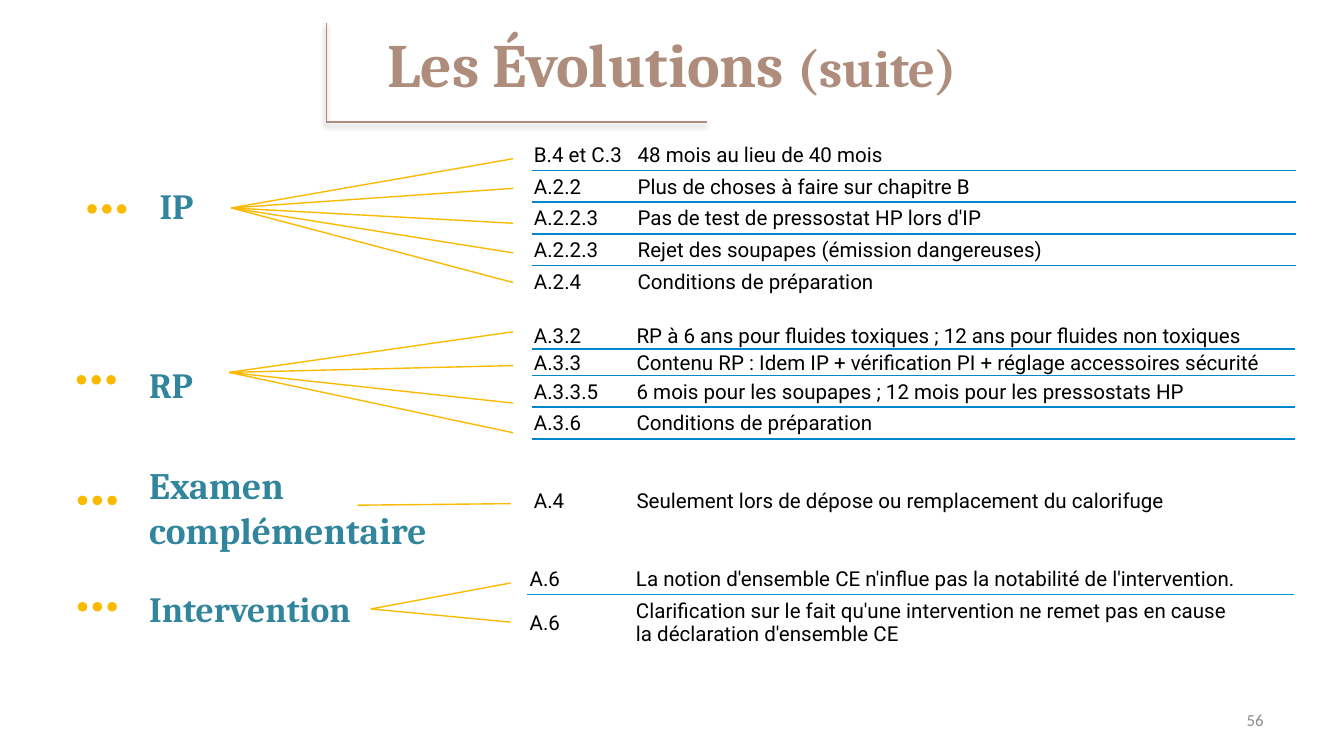
from dataclasses import dataclass

import pptx
import pptx.dml.color
import pptx.enum.shapes
import pptx.enum.text
import pptx.oxml
import pptx.oxml.ns
import pptx.util
from pptx.util import Cm, Pt

ALIGN = pptx.enum.text.PP_ALIGN
ANCHOR = pptx.enum.text.MSO_ANCHOR
SHAPES = pptx.enum.shapes
NS = pptx.oxml.ns.nsdecls("a")


@dataclass(frozen=True)
class Theme:
    title: str = "AE8D7C"
    topic: str = "31859C"
    accent: str = "FBBA00"
    rule: str = "0087CC"
    light_rule: str = "009BD2"
    paper: str = "FFFFFF"
    ink: str = "000000"
    muted: str = "8C8C8C"
    serif: str = "Cambria"
    sans: str = "Roboto"
    number_font: str = "Calibri"
    title_size: float = 33
    suffix_size: float = 28
    topic_size: float = 19
    large_topic_size: float = 20
    cell_size: float = 11
    number_size: float = 9


THEME = Theme()


@dataclass
class Topic:
    """Offsets are in cm, from the top left corner of the topic's box."""
    box: tuple        # left, top, width, height on the slide
    name: str
    label: tuple      # left, top, width, height
    dots: tuple       # left, top
    fan_origin: tuple
    fan_x: float
    fan_ys: tuple
    table: tuple      # left, top
    columns: tuple
    row_heights: tuple
    entries: tuple
    rule: str = THEME.rule
    closing_rule: bool = False
    size: float = THEME.topic_size
    line_spacing: float = 1.1


def rgb(value):
    return pptx.dml.color.RGBColor.from_string(value)


def write(paragraph, text, *, font, size, color, bold=False,
          align=ALIGN.LEFT, line_spacing=None):
    paragraph.alignment = align
    if line_spacing:
        paragraph.line_spacing = line_spacing
    for index, line in enumerate(text.split("\n")):
        if index:
            paragraph.add_line_break()
        run = paragraph.add_run()
        run.text = line
        run.font.name, run.font.size, run.font.bold = font, Pt(size), bold
        run.font.color.rgb = rgb(color)


def add_frame(slide, left, top, width, height, anchor=ANCHOR.TOP):
    frame = slide.shapes.add_textbox(Cm(left), Cm(top), Cm(width), Cm(height)).text_frame
    frame.word_wrap = True
    frame.vertical_anchor = anchor
    return frame


def add_title(slide, box):
    left, top, width, height = box
    heading = add_frame(slide, *box, anchor=ANCHOR.MIDDLE).paragraphs[0]
    style = dict(font=THEME.serif, color=THEME.title, bold=True, align=ALIGN.CENTER)
    write(heading, "Les Évolutions ", size=THEME.title_size, **style)
    write(heading, "(suite)", size=THEME.suffix_size, **style)

    # Corner bracket with a soft shadow
    x, y = left + 6.17, top + 0.43
    outline = slide.shapes.build_freeform(Cm(x), Cm(y))
    outline.add_line_segments([(Cm(x), Cm(y + 1.88)), (Cm(x + 7.19), Cm(y + 1.88))], close=False)
    bracket = outline.convert_to_shape()
    bracket.fill.background()
    bracket.line.color.rgb = rgb(THEME.title)
    bracket.line.width = Pt(0.75)
    bracket.shadow.inherit = False
    effects = bracket._element.spPr.find(pptx.oxml.ns.qn("a:effectLst"))
    effects.append(pptx.oxml.parse_xml(
        f'<a:outerShdw {NS} blurRad="{Pt(3.1)}" dist="{Pt(1.8)}" dir="5400000" rotWithShape="0">'
        f'<a:srgbClr val="{THEME.ink}"><a:alpha val="35000"/></a:srgbClr></a:outerShdw>'))


def add_page_number(slide, box):
    number = add_frame(slide, *box, anchor=ANCHOR.MIDDLE).paragraphs[0]
    write(number, "56", font=THEME.number_font, size=THEME.number_size,
          color=THEME.muted, align=ALIGN.RIGHT)


def add_dots(slide, left, top, diameter=0.18, pitch=0.28):
    group = slide.shapes.add_group_shape()
    for index in range(3):
        dot = group.shapes.add_shape(SHAPES.MSO_SHAPE.OVAL, Cm(left + index * pitch),
                                     Cm(top), Cm(diameter), Cm(diameter))
        dot.shadow.inherit = False
        dot.fill.solid()
        dot.fill.fore_color.rgb = rgb(THEME.accent)
        dot.line.fill.background()


def add_ray(slide, x1, y1, x2, y2):
    ray = slide.shapes.add_connector(SHAPES.MSO_CONNECTOR.STRAIGHT,
                                     Cm(x1), Cm(y1), Cm(x2), Cm(y2))
    ray.line.color.rgb = rgb(THEME.accent)
    ray.line.width = Pt(0.75)
    ray._element.spPr.append(pptx.oxml.parse_xml(f"<a:effectLst {NS}/>"))


def set_borders(cell, top, bottom):
    sides = (("lnL", THEME.paper), ("lnR", THEME.paper), ("lnT", top), ("lnB", bottom))
    for index, (side, color) in enumerate(sides):
        cell._tc.get_or_add_tcPr().insert(index, pptx.oxml.parse_xml(
            f'<a:{side} {NS} w="{Pt(1)}"><a:solidFill><a:srgbClr val="{color}"/>'
            f'</a:solidFill></a:{side}>'))


def add_entries(slide, left, top, topic):
    grid = slide.shapes.add_table(
        len(topic.entries), len(topic.columns), Cm(left), Cm(top),
        Cm(sum(topic.columns)), Cm(sum(topic.row_heights))).table
    grid.first_row = grid.horz_banding = False
    for column, width in zip(grid.columns, topic.columns):
        column.width = Cm(width)
    last = len(topic.entries) - 1
    for r, entry in enumerate(topic.entries):
        grid.rows[r].height = Cm(topic.row_heights[r])
        above = topic.rule if r else THEME.paper
        below = topic.rule if r < last or topic.closing_rule else THEME.paper
        for c, text in enumerate(entry):
            cell = grid.cell(r, c)
            cell.fill.background()
            cell.vertical_anchor = ANCHOR.MIDDLE
            cell.margin_left = cell.margin_right = cell.margin_top = Cm(0.03)
            cell.margin_bottom = 0
            write(cell.text_frame.paragraphs[0], text, font=THEME.sans,
                  size=THEME.cell_size, color=THEME.ink)
            set_borders(cell, above, below)


def add_topic(slide, box, topic):
    left, top = box[:2]
    add_dots(slide, left + topic.dots[0], top + topic.dots[1])

    # Topic name, one paragraph per line
    x, y, width, height = topic.label
    label = add_frame(slide, left + x, top + y, width, height)
    for index, line in enumerate(topic.name.split("\n")):
        paragraph = label.add_paragraph() if index else label.paragraphs[0]
        write(paragraph, line, font=THEME.serif, size=topic.size, color=THEME.topic,
              bold=True, line_spacing=topic.line_spacing)

    # Fan of rays towards the entries
    x, y = topic.fan_origin
    for tip in topic.fan_ys:
        add_ray(slide, left + x, top + y, left + topic.fan_x, top + tip)
    add_entries(slide, left + topic.table[0], top + topic.table[1], topic)


TOPICS = (
    Topic(box=(1.45, 2.62, 22.98, 3), name="IP", label=(1.32, 0.66, 8.48, 1.12),
          dots=(0.2, 1.24), fan_origin=(2.92, 1.31), fan_x=8.25,
          fan_ys=(0.38, 0.94, 1.6, 2.16, 2.72),
          table=(8.61, 0), columns=(1.96, 12.45), row_heights=(0.6,) * 5,
          entries=(("B.4 et C.3", "48 mois au lieu de 40 mois"),
                   ("A.2.2", "Plus de choses à faire sur chapitre B"),
                   ("A.2.2.3", "Pas de test de pressostat HP lors d'IP"),
                   ("A.2.2.3", "Rejet des soupapes (émission dangereuses)"),
                   ("A.2.4", "Conditions de préparation"))),
    Topic(box=(1.45, 6.1, 22.98, 2.16), name="RP", label=(1.12, 0.55, 1.75, 1.12),
          dots=(0, 0.99), fan_origin=(2.88, 0.94), fan_x=8.25,
          fan_ys=(0.17, 0.81, 1.52, 2.08), closing_rule=True,
          table=(8.61, 0), columns=(1.94, 12.45), row_heights=(0.48, 0.48, 0.6, 0.6),
          entries=(("A.3.2", "RP à 6 ans pour fluides toxiques ; 12 ans pour fluides non toxiques"),
                   ("A.3.3", "Contenu RP : Idem IP + vérification PI + réglage accessoires sécurité"),
                   ("A.3.3.5", "6 mois pour les soupapes ; 12 mois pour les pressostats HP"),
                   ("A.3.6", "Conditions de préparation"))),
    Topic(box=(1.45, 8.61, 22.98, 1.7), name="Examen\ncomplémentaire",
          label=(1.12, 0, 7.37, 1.7), size=THEME.large_topic_size, line_spacing=None,
          dots=(0.02, 0.76), fan_origin=(5.31, 0.94), fan_x=8.2, fan_ys=(0.91,),
          table=(8.61, 0.58), columns=(1.94, 12.45), row_heights=(0.53,),
          entries=(("A.4", "Seulement lors de dépose ou remplacement du calorifuge"),)),
    Topic(box=(1.45, 10.64, 22.98, 1.64), name="Intervention",
          label=(1.12, 0.26, 7.37, 1.12), rule=THEME.light_rule,
          dots=(0.02, 0.74), fan_origin=(5.56, 0.87), fan_x=8.2, fan_ys=(0.38, 1.12),
          table=(8.53, 0), columns=(2.01, 12.45), row_heights=(0.6, 1.04),
          entries=(("A.6", "La notion d'ensemble CE n'influe pas la notabilité de l'intervention."),
                   ("A.6", "Clarification sur le fait qu'une intervention ne remet pas en cause\n"
                           "la déclaration d'ensemble CE"))),
)


def main():
    deck = pptx.Presentation()
    deck.slide_width, deck.slide_height = Cm(25.4), Cm(14.29)
    slide = deck.slides.add_slide(deck.slide_layouts[6])
    add_title(slide, (0, 0, 25.4, 2.39))
    for topic in TOPICS:
        add_topic(slide, topic.box, topic)
    add_page_number(slide, (18.21, 13.23, 5.92, 0.76))
    deck.save("out.pptx")


if __name__ == "__main__":
    main()
